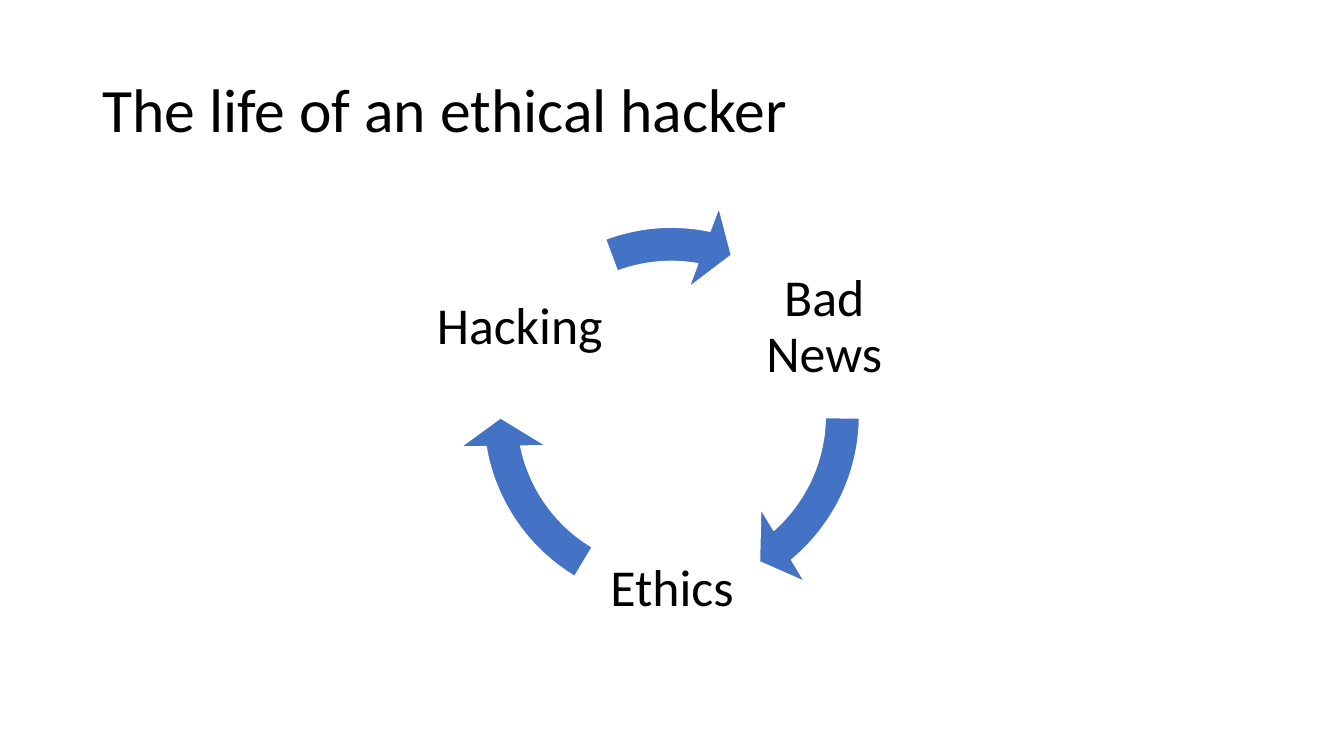
import math

import pptx
import pptx.dml.color
import pptx.enum.shapes
import pptx.enum.text
import pptx.util

PX = 9525
COLOURS = {"text": "000000", "arrow": "4472C4", "outline": "FFFFFF"}
CENTRE_X, CENTRE_Y = 640, 395
LABEL_RADIUS, LABEL_SIZE = 167, 172
ARROW_SIZE = 407
ARROW_THICKNESS, ARROW_HEAD_WIDTH, ARROW_HEAD_ANGLE = 0.08, 0.1, 9.6
STEPS = [
    ("Bad News", -30, 0.86, 49.4),
    ("Ethics", 90, 121, 169.53),
    ("Hacking", 210, 249.45, 280.94),
]


def px(length):
    """Turn pixels into EMU."""
    return round(length) * PX


def colour(name):
    """Return a named colour of the slide."""
    return pptx.dml.color.RGBColor.from_string(COLOURS[name])


def add_text(slide, box, text, size, alignment, margins=None):
    """Add a vertically centred text box with one paragraph."""
    frame = slide.shapes.add_textbox(*map(px, box)).text_frame
    frame.word_wrap = True
    frame.vertical_anchor = pptx.enum.text.MSO_ANCHOR.MIDDLE
    if margins is not None:
        frame.margin_left = frame.margin_right = px(margins)
        frame.margin_top = frame.margin_bottom = px(margins)
    paragraph = frame.paragraphs[0]
    paragraph.text = text
    paragraph.alignment = alignment
    paragraph.line_spacing = 0.9
    paragraph.font.name = "Calibri"
    paragraph.font.size = pptx.util.Pt(size)
    paragraph.font.color.rgb = colour("text")


def add_label(slide, text, angle):
    """Add a step label at an angle on the cycle."""
    left = CENTRE_X + LABEL_RADIUS * math.cos(math.radians(angle)) - LABEL_SIZE / 2
    top = CENTRE_Y + LABEL_RADIUS * math.sin(math.radians(angle)) - LABEL_SIZE / 2
    box = (left, top, LABEL_SIZE, LABEL_SIZE)
    add_text(slide, box, text, 37, pptx.enum.text.PP_ALIGN.CENTER, 5)


def add_arrow(slide, start, end):
    """Add a circular arrow between two angles in degrees."""
    box = (CENTRE_X - ARROW_SIZE / 2, CENTRE_Y - ARROW_SIZE / 2, ARROW_SIZE, ARROW_SIZE)
    kind = pptx.enum.shapes.MSO_SHAPE.CIRCULAR_ARROW
    shape = slide.shapes.add_shape(kind, *map(px, box))
    angles = [degrees * 0.6 for degrees in (ARROW_HEAD_ANGLE, end, start)]
    for index, value in enumerate([ARROW_THICKNESS, *angles, ARROW_HEAD_WIDTH]):
        shape.adjustments[index] = value
    shape.shadow.inherit = False
    shape.fill.solid()
    shape.fill.fore_color.rgb = colour("arrow")
    shape.line.color.rgb = colour("outline")
    shape.line.width = pptx.util.Pt(1)


def main():
    """Build the slide and save it."""
    presentation = pptx.Presentation()
    presentation.slide_width, presentation.slide_height = px(1280), px(720)
    slide = presentation.slides.add_slide(presentation.slide_layouts[6])
    add_text(slide, (88, 38, 1104, 139), "The life of an ethical hacker", 44,
             pptx.enum.text.PP_ALIGN.LEFT)
    for text, angle, start, end in STEPS:
        add_label(slide, text, angle)
        add_arrow(slide, start, end)
    presentation.save("out.pptx")


if __name__ == "__main__":
    main()
